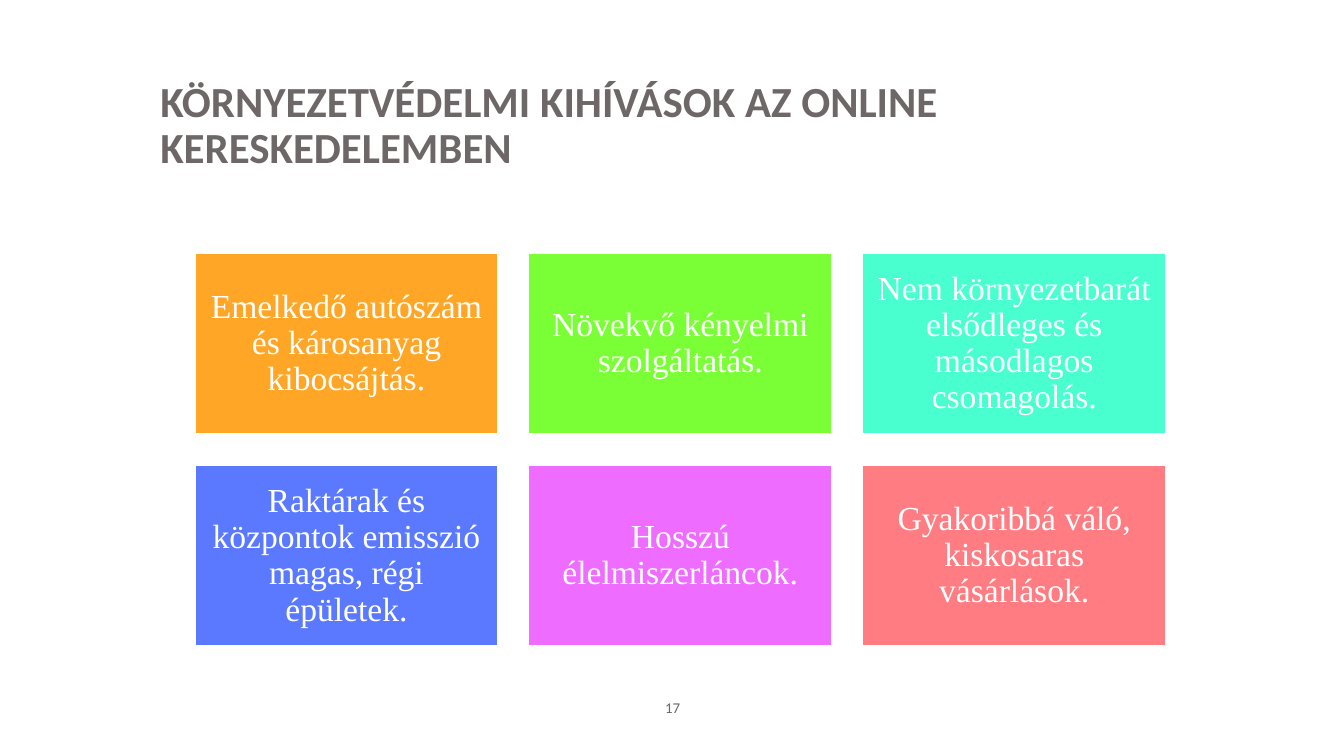
from pptx import Presentation
from pptx.dml.color import RGBColor
from pptx.enum import shapes, text
from pptx.util import Cm, Pt

GREY = "6E6767"
WHITE = "FFFFFF"
COLUMNS = 3
CARD_LEFT, CARD_TOP = 3.68, 4.78
CARD_WIDTH, CARD_HEIGHT = 5.74, 3.43
COLUMN_STEP, ROW_STEP = 6.31, 4.01

CHALLENGES = [
    ("Emelkedő autószám és károsanyag kibocsájtás.", "FFA626"),
    ("Növekvő kényelmi szolgáltatás.", "7AFF37"),
    ("Nem környezetbarát elsődleges és másodlagos csomagolás.", "49FFCF"),
    ("Raktárak és központok emisszió magas, régi épületek.", "5A79FF"),
    ("Hosszú élelmiszerláncok.", "EE6CFF"),
    ("Gyakoribbá váló, kiskosaras vásárlások.", "FF7D82"),
]


def color(value):
    return RGBColor.from_string(value)


def write(shape, words, font_name, size, font_color, align, anchor,
          margins=(0, 0), bold=False, wrap=True, line_spacing=None):
    """Fill a shape with one paragraph; margins are (horizontal, vertical) in cm."""
    frame = shape.text_frame
    frame.text = words
    frame.word_wrap = wrap
    frame.vertical_anchor = anchor
    frame.margin_left = frame.margin_right = Cm(margins[0])
    frame.margin_top = frame.margin_bottom = Cm(margins[1])
    paragraph = frame.paragraphs[0]
    paragraph.alignment = align
    paragraph.line_spacing = line_spacing
    font = paragraph.runs[0].font
    font.name = font_name
    font.size = Pt(size)
    font.bold = bold
    font.color.rgb = color(font_color)


def add_title(slide, words):
    box = slide.shapes.add_textbox(Cm(2.84), Cm(1.42), Cm(20.02), Cm(3.1))
    write(box, words, "Calibri", 23, GREY, text.PP_ALIGN.LEFT,
          text.MSO_ANCHOR.TOP, margins=(0.19, 0.1), bold=True, line_spacing=0.9)


def add_card(slide, index, words, fill):
    row, column = divmod(index, COLUMNS)
    card = slide.shapes.add_shape(
        shapes.MSO_SHAPE.RECTANGLE,
        Cm(CARD_LEFT + column * COLUMN_STEP), Cm(CARD_TOP + row * ROW_STEP),
        Cm(CARD_WIDTH), Cm(CARD_HEIGHT))
    card.shadow.inherit = False
    card.fill.solid()
    card.fill.fore_color.rgb = color(fill)
    card.line.color.rgb = color(WHITE)
    card.line.width = Pt(1)
    write(card, words, "Times New Roman", 18, WHITE, text.PP_ALIGN.CENTER,
          text.MSO_ANCHOR.MIDDLE, margins=(0.18, 0.18), line_spacing=0.9)


def add_page_number(slide, number):
    box = slide.shapes.add_textbox(Cm(12.5), Cm(13.21), Cm(0.43), Cm(0.33))
    write(box, number, "Calibri", 8, GREY, text.PP_ALIGN.CENTER,
          text.MSO_ANCHOR.TOP, wrap=False)


def main():
    presentation = Presentation()
    presentation.slide_width = Cm(25.4)
    presentation.slide_height = Cm(14.29)
    slide = presentation.slides.add_slide(presentation.slide_layouts[6])
    add_page_number(slide, "17")
    add_title(slide, "KÖRNYEZETVÉDELMI KIHÍVÁSOK AZ ONLINE KERESKEDELEMBEN")
    for index, (words, fill) in enumerate(CHALLENGES):
        add_card(slide, index, words, fill)
    presentation.save("out.pptx")


if __name__ == "__main__":
    main()
